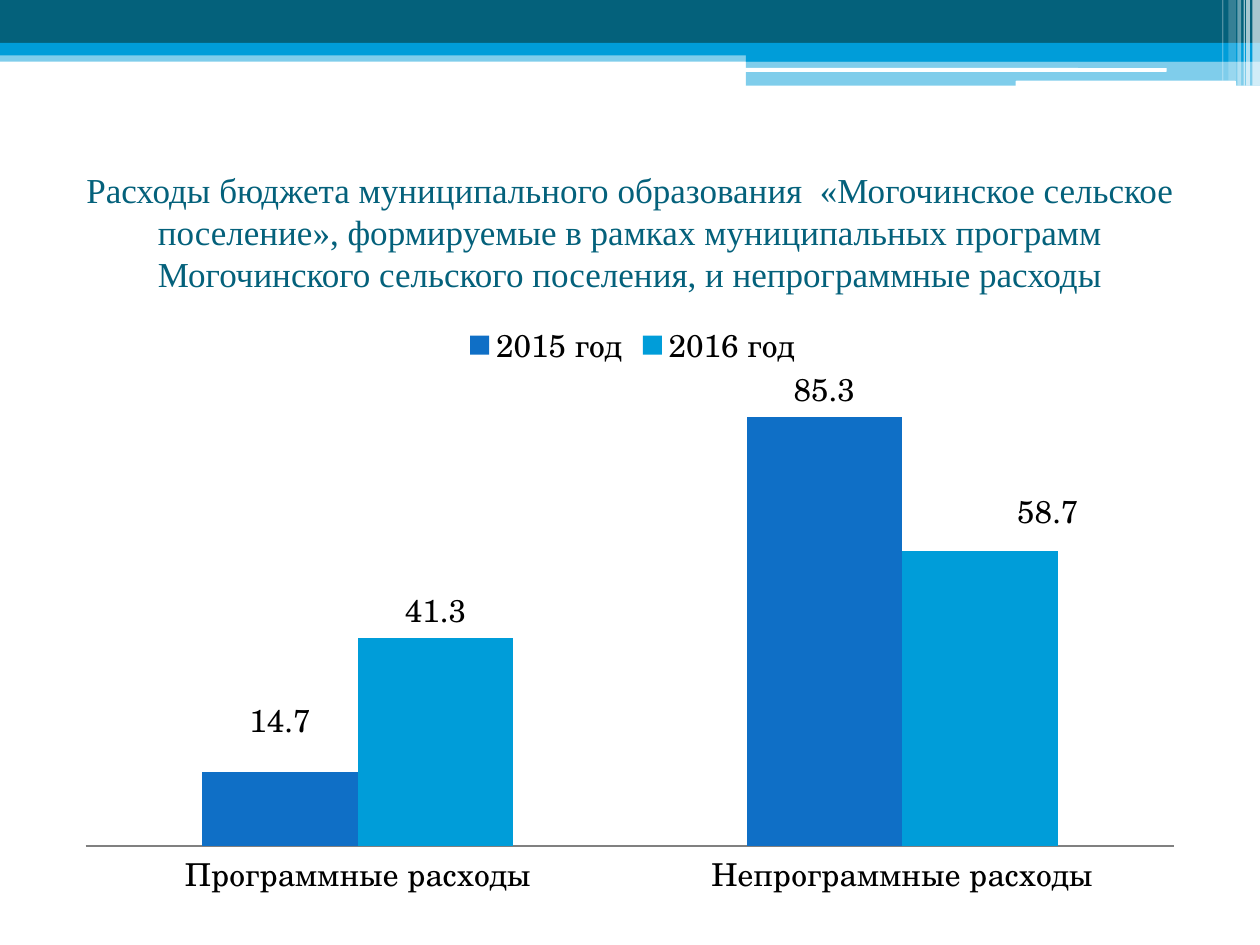
from lxml.etree import SubElement
from pptx import Presentation
from pptx.chart.data import CategoryChartData
from pptx.dml.color import RGBColor
from pptx.enum.chart import XL_CHART_TYPE, XL_LABEL_POSITION, XL_LEGEND_POSITION, XL_TICK_MARK, XL_TICK_LABEL_POSITION
from pptx.enum.shapes import MSO_SHAPE
from pptx.enum.text import MSO_ANCHOR, PP_ALIGN
from pptx.oxml.ns import qn
from pptx.util import Pt

PX = 9144
TEAL = RGBColor(0x04, 0x61, 0x7B)
SKY = RGBColor(0x00, 0x9D, 0xD9)
BLUE = RGBColor(0x0F, 0x6F, 0xC6)
GRAY = RGBColor(0x80, 0x80, 0x80)
BLACK = RGBColor(0, 0, 0)
WHITE = RGBColor(255, 255, 255)
SERIF = "Times New Roman"
SCHOOL = "TeX Gyre Schola"
RECT = MSO_SHAPE.RECTANGLE
ROUND = MSO_SHAPE.ROUNDED_RECTANGLE

TITLE = (
    "Расходы бюджета муниципального образования  «Могочинское сельское поселение», "
    "формируемые в рамках муниципальных программ Могочинского сельского поселения, "
    "и непрограммные расходы"
)
BANDS = [
    (RECT, (0, 40, 1000, 9), SKY, 50),
    (RECT, (0, 0, 1000, 34), TEAL, 100),
    (RECT, (0, 34, 1000, 10), SKY, 100),
    (RECT, (592, 39, 408, 10), SKY, 100),
    (RECT, (592, 48, 408, 20), SKY, 50),
    (ROUND, (591, 54, 335, 3), WHITE, 100),
    (ROUND, (806, 64, 175, 5), WHITE, 100),
]
STRIPES = [
    (994, 6, 68, 65), (989, 3, 68, 65), (987, 1, 68, 60),
    (982, 3, 68, 40), (975, 6, 64, 20), (970, 1, 64, 30),
]
CATS = ["Программные расходы", "Непрограммные расходы"]
SERIES = [
    ("2015 год", (14.7, 85.3), BLUE),
    ("2016 год", (41.3, 58.7), SKY),
]
SHIFTS = [(0, 0, 0, -0.04), (1, 1, 0.06, -0.02)]


class Deck:
    """Holds the style and the current slide."""

    def __init__(self):
        self.show = Presentation()
        self.show.slide_width = 1000 * PX
        self.show.slide_height = 750 * PX
        self.slide = self.show.slides.add_slide(self.show.slide_layouts[5])

    def scale(self, box):
        return [n * PX for n in box]

    def font(self, font, name, size, color):
        font.name = name
        font.size = Pt(size)
        font.color.rgb = color

    def band(self, kind, box, color, alpha=100):
        shape = self.slide.shapes.add_shape(kind, *self.scale(box))
        shape.shadow.inherit = False
        shape.line.fill.background()
        shape.fill.solid()
        shape.fill.fore_color.rgb = color
        if alpha < 100:
            tint = shape.fill._xPr.find(".//" + qn("a:srgbClr"))
            SubElement(tint, qn("a:alpha"), val=str(alpha * 1000))

    def title(self, text, box):
        shape = self.slide.shapes.title
        shape.left, shape.top, shape.width, shape.height = self.scale(box)
        frame = shape.text_frame
        frame.text = text
        frame.word_wrap = True
        frame.vertical_anchor = MSO_ANCHOR.MIDDLE
        para = frame.paragraphs[0]
        para.alignment = PP_ALIGN.CENTER
        self.font(para.runs[0].font, SERIF, 20, TEAL)

    def place(self, part, after, **spots):
        for old in part.findall(qn("c:layout")):
            part.remove(old)
        layout = part.makeelement(qn("c:layout"))
        if after:
            part.find(qn(after)).addnext(layout)
        else:
            part.insert(0, layout)
        manual = SubElement(layout, qn("c:manualLayout"))
        for tag, val in spots.items():
            SubElement(manual, qn("c:" + tag), val=str(val))

    def chart(self, cats, series, shifts, box):
        data = CategoryChartData()
        data.categories = cats
        for name, vals, _ in series:
            data.add_series(name, vals)
        frame = self.slide.shapes.add_chart(XL_CHART_TYPE.COLUMN_CLUSTERED, *self.scale(box), data)
        chart = frame.chart
        chart.has_title = False
        self.font(chart.font, SCHOOL, 18, BLACK)
        self.axes(chart)
        chart.has_legend = True
        legend = chart.legend
        legend.position = XL_LEGEND_POSITION.TOP
        legend.include_in_layout = False
        self.place(legend._element, "c:legendPos", xMode="edge", yMode="edge", x=0.35, y=0.01)
        plot = chart.plots[0]
        plot.gap_width = 150
        plot.overlap = 0
        plot.vary_by_categories = False
        for bars, (_, _, color) in zip(plot.series, series):
            bars.format.fill.solid()
            bars.format.fill.fore_color.rgb = color
            self.labels(bars.data_labels)
        for row, col, x, y in shifts:
            bars = plot.series[row]
            label = bars.points[col].data_label
            self.font(label.font, SCHOOL, 18, BLACK)
            label.position = XL_LABEL_POSITION.OUTSIDE_END
            self.place(bars._element.find(".//" + qn("c:dLbl")), "c:idx", x=x, y=y)

    def labels(self, labels):
        labels.show_value = True
        labels.position = XL_LABEL_POSITION.OUTSIDE_END
        self.font(labels.font, SCHOOL, 18, BLACK)
        root = labels._element
        for old in root.findall(qn("c:showLeaderLines")):
            root.remove(old)
        SubElement(root, qn("c:showLeaderLines"), val="0")

    def axes(self, chart):
        axis = chart.category_axis
        axis.major_tick_mark = XL_TICK_MARK.NONE
        axis.tick_label_position = XL_TICK_LABEL_POSITION.NEXT_TO_AXIS
        axis.format.line.color.rgb = GRAY
        axis.format.line.width = Pt(1)
        scale = chart.value_axis
        scale.minimum_scale = 0
        scale.maximum_scale = 90
        scale.major_tick_mark = XL_TICK_MARK.NONE
        scale.has_major_gridlines = False
        scale.visible = False
        area = chart._chartSpace.chart.plotArea
        self.place(area, None, layoutTarget="inner", xMode="edge", yMode="edge", x=0.02, y=0.14, w=0.96, h=0.76)


def main():
    deck = Deck()
    for band in BANDS:
        deck.band(*band)
    for left, width, height, alpha in STRIPES:
        deck.band(RECT, (left, 0, width, height), WHITE, alpha)
    deck.title(TITLE, (50, 125, 900, 117))
    deck.chart(CATS, SERIES, SHIFTS, (50, 246, 900, 473))
    deck.show.save("out.pptx")


if __name__ == "__main__":
    main()
